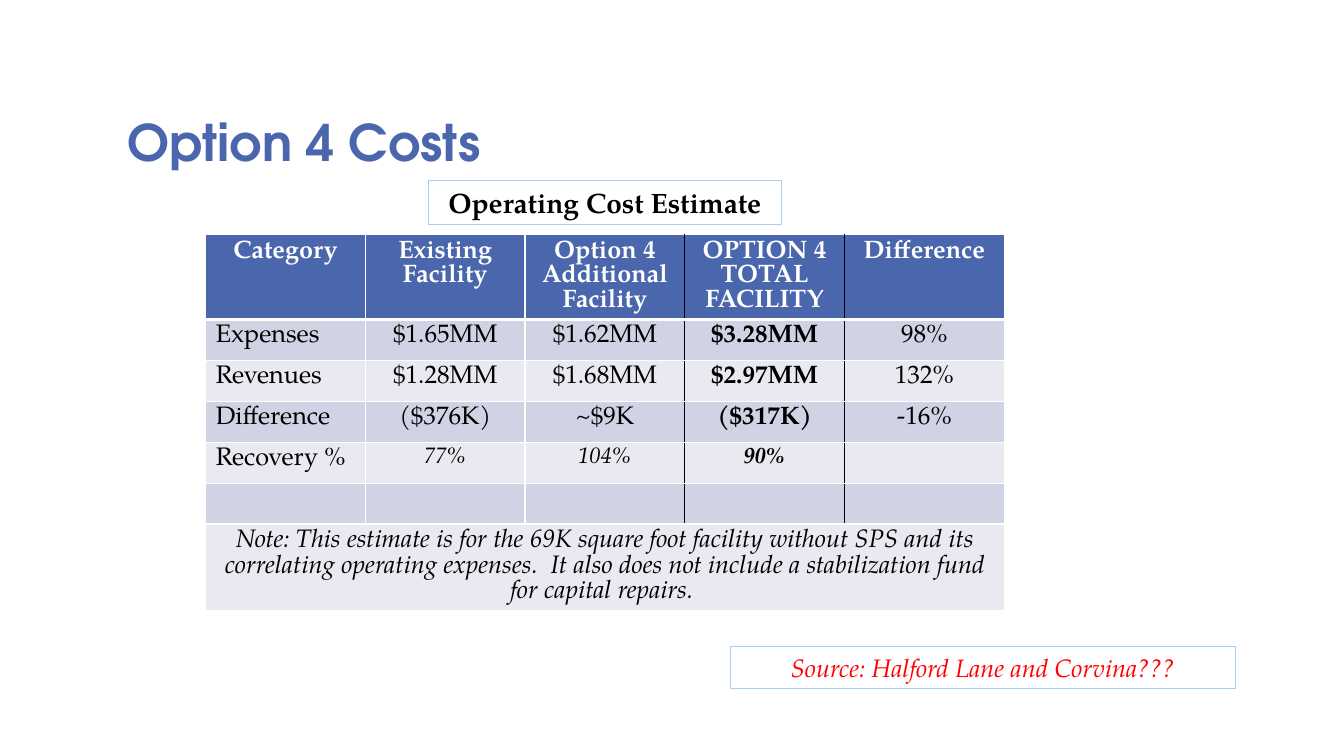
from lxml import etree
from pptx import Presentation
from pptx import util as u
from pptx.dml.color import RGBColor
from pptx.enum import shapes, text
from pptx.oxml import ns

PX = 9144  # 100 px to the inch
BLUE = RGBColor(0x4A, 0x66, 0xAC)
PALE = RGBColor(0xAC, 0xCB, 0xF9)
DARK = RGBColor(0xD0, 0xD3, 0xE3)
LIGHT = RGBColor(0xE9, 0xEA, 0xF1)
WHITE = RGBColor(255, 255, 255)
BLACK = RGBColor(0, 0, 0)
RED = RGBColor(255, 0, 0)
HEAD, BODY = "TeX Gyre Adventor", "TeX Gyre Pagella"
LEFT, MID = text.PP_ALIGN.LEFT, text.PP_ALIGN.CENTER


def write(frame, words, size=18, color=BLACK, bold=False, italic=False,
          face=BODY, align=MID, space=1.0):
    para = frame.paragraphs[0]
    para.alignment, para.line_spacing = align, space
    if words:
        run = para.add_run()
        run.text = words
        font = run.font
        font.name, font.size = face, u.Pt(size)
        font.bold, font.italic = bold, italic
        font.color.rgb = color


def edge(cell, side, color, width):
    """Add one cell border; call in the order L, R, T, B, before the fill."""
    props = cell._tc.get_or_add_tcPr()
    line = etree.SubElement(props, ns.qn("a:ln" + side), w=str(u.Pt(width)))
    fill = etree.SubElement(line, ns.qn("a:solidFill"))
    etree.SubElement(fill, ns.qn("a:srgbClr"), val=str(color))


deck = Presentation()
deck.slide_width, deck.slide_height = 1333 * PX, 750 * PX
slide = deck.slides.add_slide(deck.slide_layouts[5])

title = slide.shapes.title
title.left, title.top, title.width, title.height = [
    n * PX for n in (116, 58, 950, 117)]
title.text_frame.word_wrap = True
title.text_frame.auto_size = text.MSO_AUTO_SIZE.NONE
title.text_frame.vertical_anchor = text.MSO_ANCHOR.BOTTOM
write(title.text_frame, "Option 4 Costs", size=36, color=BLUE, bold=True,
      face=HEAD, align=LEFT, space=0.8)

NOTE = ("Note: This estimate is for the 69K square foot facility without SPS "
        "and its correlating operating expenses.  It also does not include a "
        "stabilization fund for capital repairs. ")
ROWS = [
    ["Category", "Existing Facility", "Option 4 Additional Facility",
     "OPTION 4 TOTAL FACILITY", "Difference"],
    ["Expenses", "$1.65MM", "$1.62MM", "$3.28MM", "98%"],
    ["Revenues", "$1.28MM", "$1.68MM", "$2.97MM", "132%"],
    ["Difference", "($376K)", "~$9K", "($317K)", "-16%"],
    ["Recovery %", "77%", "104%", "90%", ""],
    [""] * 5,
    [NOTE] + [""] * 4,
]
WIDE = 792 * PX
HIGH = [84 * PX] + [203 * PX // 5] * 5 + [84 * PX]
RATE, LAST, TOTAL = 4, 6, 3  # recovery row, note row, total column

table = slide.shapes.add_table(
    len(ROWS), 5, 204 * PX, 233 * PX, WIDE, sum(HIGH)).table
for col in table.columns:
    col.width = WIDE // 5
for r, row in enumerate(ROWS):
    table.rows[r].height = HIGH[r]
    for c, words in enumerate(row):
        cell = table.cell(r, c)
        rate = r == RATE and c > 0
        write(cell.text_frame, words, size=16 if rate else 18,
              color=BLACK if r else WHITE, bold=r == 0 or c == TOTAL,
              italic=rate or r == LAST,
              align=LEFT if c == 0 and 0 < r < LAST else MID)
        black = r < LAST
        edge(cell, "L", BLACK if black and c in (3, 4) else WHITE, 1)
        edge(cell, "R", BLACK if black and c in (2, 3) else WHITE, 1)
        edge(cell, "T", WHITE, 3 if r == 1 else 1)
        edge(cell, "B", WHITE, 3 if r == 0 else 1)
        cell.fill.solid()
        cell.fill.fore_color.rgb = BLUE if r == 0 else DARK if r % 2 else LIGHT
table.cell(LAST, 0).merge(table.cell(LAST, 4))

for place, words, style in [
    ((425, 179, 350, 44), "Operating Cost Estimate", dict(size=20, bold=True)),
    ((725, 641, 500, 42), "Source: Halford Lane and Corvina???",
     dict(color=RED, italic=True)),
]:
    box = slide.shapes.add_shape(
        shapes.MSO_SHAPE.RECTANGLE, *[n * PX for n in place])
    box.shadow.inherit = False
    box.fill.background()
    box.line.color.rgb = PALE
    box.line.width = u.Pt(0.75)
    box.text_frame.word_wrap = True
    box.text_frame.vertical_anchor = text.MSO_ANCHOR.MIDDLE
    write(box.text_frame, words, **style)

deck.save("out.pptx")
